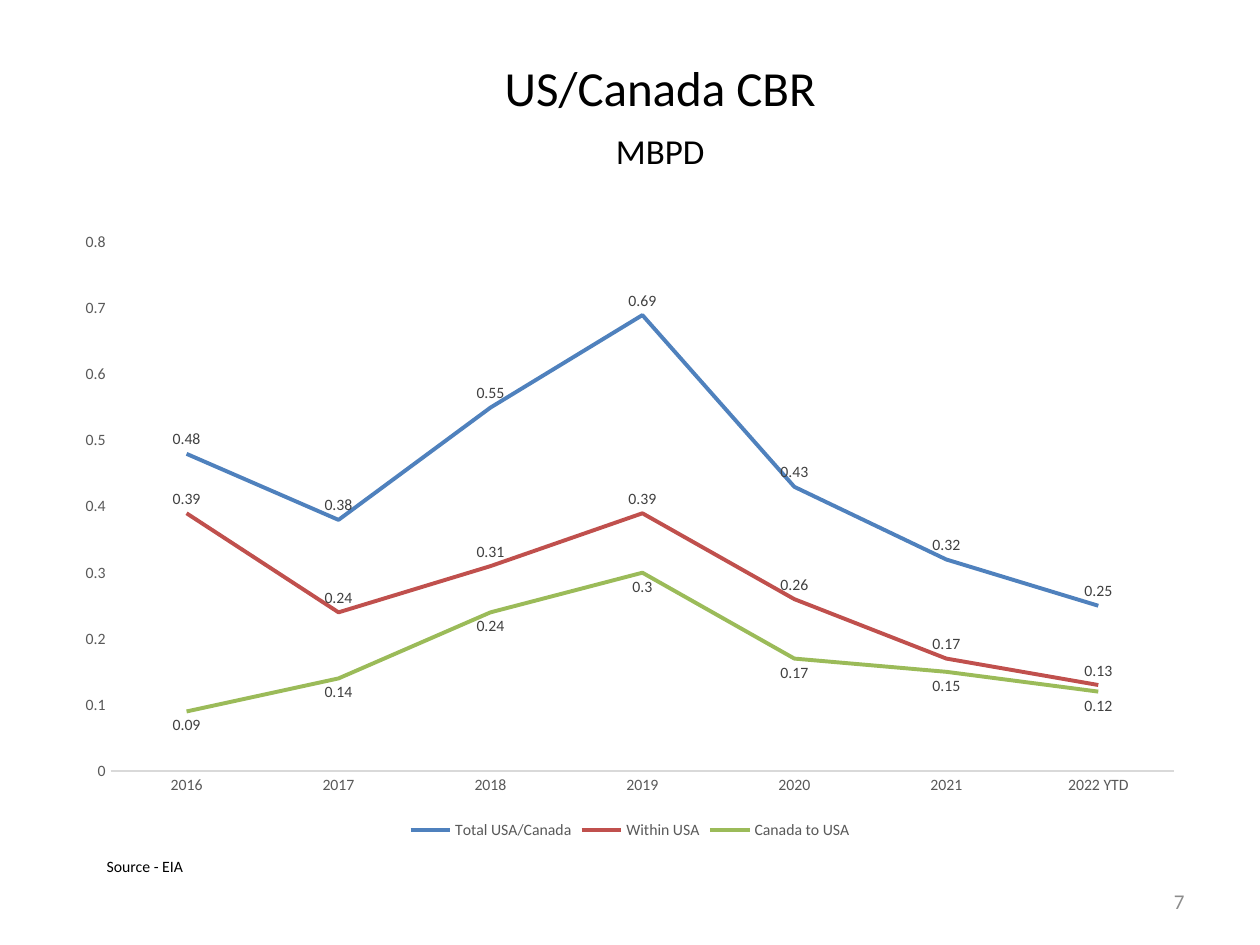
"""Build the US/Canada CBR line chart slide."""
import pptx
import pptx.chart.data
import pptx.dml.color
import pptx.enum.chart
import pptx.enum.text
import pptx.util

Cm = pptx.util.Cm
Pt = pptx.util.Pt
Align = pptx.enum.text.PP_ALIGN
Anchor = pptx.enum.text.MSO_ANCHOR
LabelPosition = pptx.enum.chart.XL_LABEL_POSITION
TickMark = pptx.enum.chart.XL_TICK_MARK

FONT = "Calibri"
YEARS = ["2016", "2017", "2018", "2019", "2020", "2021", "2022 YTD"]
SERIES = [
    ("Total USA/Canada", "4F81BD", LabelPosition.ABOVE,
     [0.48, 0.38, 0.55, 0.69, 0.43, 0.32, 0.25]),
    ("Within USA", "C0504D", LabelPosition.ABOVE,
     [0.39, 0.24, 0.31, 0.39, 0.26, 0.17, 0.13]),
    ("Canada to USA", "9BBB59", LabelPosition.BELOW,
     [0.09, 0.14, 0.24, 0.3, 0.17, 0.15, 0.12]),
]
CHART_BOX = (1.27, 4.45, 22.86, 12.57)
TEXTS = [
    {"box": (1.27, 0.76, 22.86, 3.18),
     "frame": {"vertical_anchor": Anchor.MIDDLE,
               "margin_left": Cm(1.47), "margin_bottom": Cm(0.2)},
     "lines": [("US/Canada CBR", 28, "000000", {"alignment": Align.CENTER}),
               ("MBPD", 20, "000000",
                {"alignment": Align.CENTER, "space_before": Pt(7.6)})]},
    {"box": (18.21, 17.65, 5.92, 1.02),
     "frame": {"vertical_anchor": Anchor.MIDDLE},
     "lines": [("7", 12, "8C8C8C", {"alignment": Align.RIGHT})]},
    {"box": (1.9, 17.15, 2.54, 0.64),
     "frame": {"vertical_anchor": Anchor.TOP},
     "lines": [("Source - EIA", 9, "000000", {"alignment": Align.LEFT})]},
]


def apply(target, values):
    for name, value in values.items():
        setattr(target, name, value)


def paint(color_format, value):
    color_format.rgb = pptx.dml.color.RGBColor.from_string(value)


def style_font(font, size, color):
    apply(font, {"name": FONT, "size": Pt(size), "bold": False})
    paint(font.color, color)


def add_text(slide, box, frame, lines):
    text_frame = slide.shapes.add_textbox(*map(Cm, box)).text_frame
    apply(text_frame, {"word_wrap": True, **frame})
    for index, (text, size, color, layout) in enumerate(lines):
        paragraph = text_frame.add_paragraph() if index else text_frame.paragraphs[0]
        apply(paragraph, layout)
        run = paragraph.add_run()
        run.text = text
        style_font(run.font, size, color)


def style_axes(chart):
    for axis in (chart.category_axis, chart.value_axis):
        apply(axis, {"major_tick_mark": TickMark.NONE, "minor_tick_mark": TickMark.NONE,
                     "has_major_gridlines": False})
        style_font(axis.tick_labels.font, 9, "595959")
    paint(chart.category_axis.format.line.color, "D9D9D9")
    chart.category_axis.format.line.width = Pt(0.75)
    apply(chart.value_axis, {"minimum_scale": 0, "maximum_scale": 0.8, "major_unit": 0.1})
    chart.value_axis.format.line.fill.background()


def add_line_chart(slide):
    data = pptx.chart.data.CategoryChartData()
    data.categories = YEARS
    for name, _, _, values in SERIES:
        data.add_series(name, values)
    chart = slide.shapes.add_chart(
        pptx.enum.chart.XL_CHART_TYPE.LINE, *map(Cm, CHART_BOX), data).chart
    apply(chart, {"has_title": False, "has_legend": True})
    style_font(chart.font, 10, "000000")
    apply(chart.legend, {"position": pptx.enum.chart.XL_LEGEND_POSITION.BOTTOM,
                         "include_in_layout": False})
    style_font(chart.legend.font, 9, "595959")
    style_axes(chart)
    chart.plots[0].vary_by_categories = False
    for series, (_, color, position, _) in zip(chart.plots[0].series, SERIES):
        series.smooth = False
        series.marker.style = pptx.enum.chart.XL_MARKER_STYLE.NONE
        series.format.line.width = Pt(2.25)
        paint(series.format.line.color, color)
        apply(series.data_labels, {"show_value": True, "position": position})
        style_font(series.data_labels.font, 9, "404040")


def main():
    presentation = pptx.Presentation()
    apply(presentation, {"slide_width": Cm(25.4), "slide_height": Cm(19.05)})
    slide = presentation.slides.add_slide(presentation.slide_layouts[6])
    for text in TEXTS:
        add_text(slide, **text)
    add_line_chart(slide)
    presentation.save("out.pptx")


if __name__ == "__main__":
    main()
